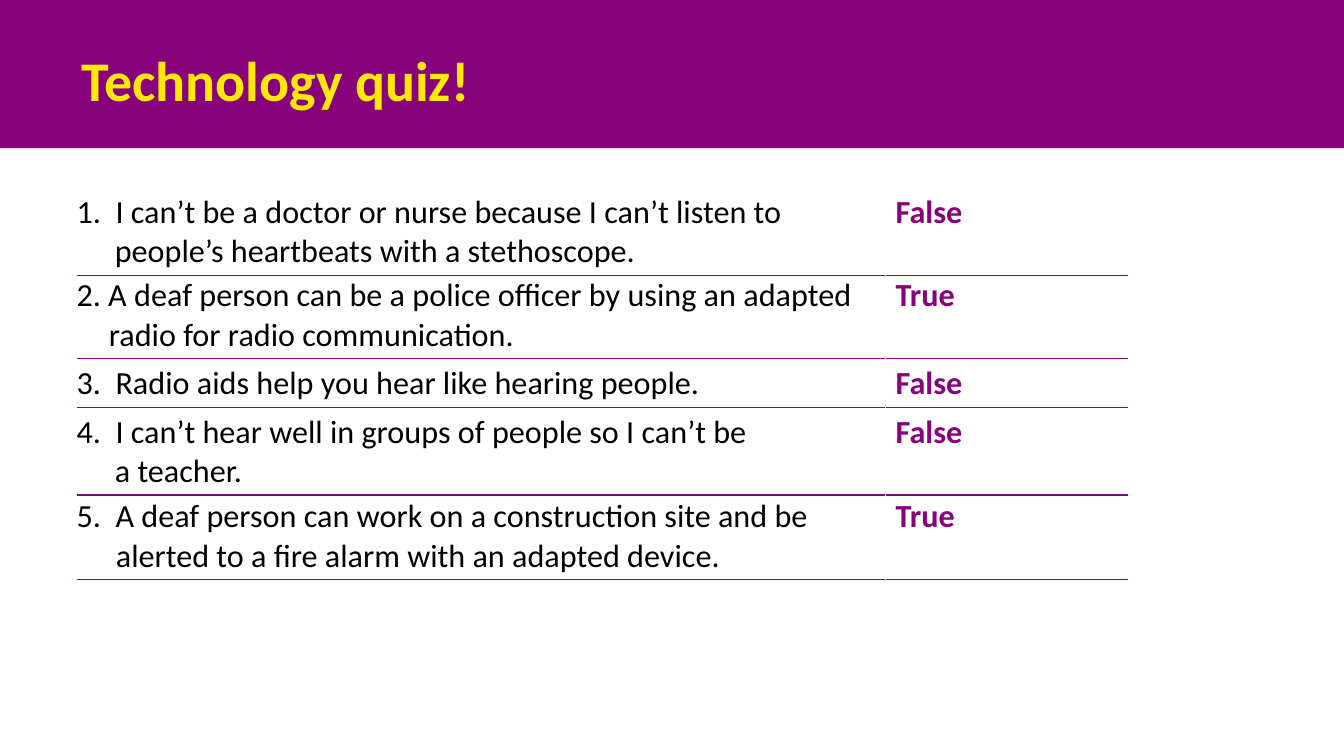
"""Build the technology quiz slide with its statements and answers."""
from dataclasses import dataclass

from lxml import etree
from pptx import Presentation
from pptx.dml.color import RGBColor
from pptx.enum.shapes import MSO_SHAPE
from pptx.enum.text import MSO_ANCHOR
from pptx.oxml.ns import qn
from pptx.util import Inches, Pt

RECTANGLE = MSO_SHAPE.RECTANGLE
MIDDLE = MSO_ANCHOR.MIDDLE


@dataclass(frozen=True)
class Theme:
    font: str = "Calibri"
    purple: str = "87027B"
    yellow: str = "FFE900"
    white: str = "FFFFFF"
    black: str = "000000"
    title_size: int = 40
    quiz_size: int = 23


THEME = Theme()


def add_text(paragraph, text, size, color, bold=False):
    for index, line in enumerate(text.split("\n")):
        if index:
            paragraph.add_line_break()
        run = paragraph.add_run()
        run.text = line
        run.font.name = THEME.font
        run.font.size = Pt(size)
        run.font.bold = bold
        run.font.color.rgb = RGBColor.from_string(color)


def add_quiz_cell(left, top, width, height, borders):
    table = slide.shapes.add_table(
        1, 1, Inches(left), Inches(top), Inches(width), Inches(height)
    ).table
    table.first_row = False
    table.horz_banding = False
    cell = table.cell(0, 0)
    properties = cell._tc.get_or_add_tcPr()
    for side in "LRTB":
        line = etree.SubElement(properties, qn(f"a:ln{side}"), w=str(Pt(1)))
        if side in borders:
            fill = etree.SubElement(line, qn("a:solidFill"))
            etree.SubElement(fill, qn("a:srgbClr"), val=borders[side])
        else:
            etree.SubElement(line, qn("a:noFill"))
    cell.fill.background()
    return cell


prs = Presentation()
prs.slide_width = Inches(13.34)
prs.slide_height = Inches(7.5)
slide = prs.slides.add_slide(prs.slide_layouts[6])

banner = slide.shapes.add_shape(RECTANGLE, 0, 0, prs.slide_width, Inches(1.47))
banner.shadow.inherit = False
banner.fill.solid()
banner.fill.fore_color.rgb = RGBColor.from_string(THEME.purple)
banner.line.fill.background()

title = slide.shapes.add_textbox(
    Inches(0.68), Inches(0.35), Inches(8.87), Inches(0.87)
).text_frame
title.word_wrap = True
title.vertical_anchor = MIDDLE
title.margin_left = title.margin_right = Inches(0.13)
title.margin_top = title.margin_bottom = Inches(0.07)
add_text(title.paragraphs[0], "Technology quiz!", THEME.title_size, THEME.yellow, True)

QUIZ = [
    (1.86, 0.87, 0.38, "1.  I can’t be a doctor or nurse because I can’t listen to "
     "people’s heartbeats with a stethoscope.", "False"),
    (2.69, 0.87, 0.32, "2. A deaf person can be a police officer by using an adapted "
     "radio for radio communication.", "True"),
    (3.56, 0.48, 0, "3.  Radio aids help you hear like hearing people.", "False"),
    (4.04, 0.87, 0.38, "4.  I can’t hear well in groups of people so I can’t be\n"
     "a teacher.", "False"),
    (4.88, 0.87, 0.39, "5.  A deaf person can work on a construction site and be "
     "alerted to a fire alarm with an adapted device.", "True"),
]
STATEMENT_LEFT, STATEMENT_WIDTH, ANSWER_WIDTH = 0.76, 8.03, 2.41
ANSWER_BORDERS = {"L": THEME.white, "B": THEME.purple}
STATEMENT_BORDERS = {**ANSWER_BORDERS, "R": THEME.white}

for top, height, indent, statement, answer in QUIZ:
    statement_cell = add_quiz_cell(
        STATEMENT_LEFT, top, STATEMENT_WIDTH, height, STATEMENT_BORDERS
    )
    statement_cell.margin_left = 0
    statement_line = statement_cell.text_frame.paragraphs[0]
    hanging = statement_line._p.get_or_add_pPr()
    hanging.set("marL", str(Inches(indent)))
    hanging.set("indent", str(-Inches(indent)))
    add_text(statement_line, statement, THEME.quiz_size, THEME.black)

    answer_cell = add_quiz_cell(
        STATEMENT_LEFT + STATEMENT_WIDTH, top, ANSWER_WIDTH, height, ANSWER_BORDERS
    )
    answer_line = answer_cell.text_frame.paragraphs[0]
    add_text(answer_line, answer, THEME.quiz_size, THEME.purple, True)

prs.save("out.pptx")
